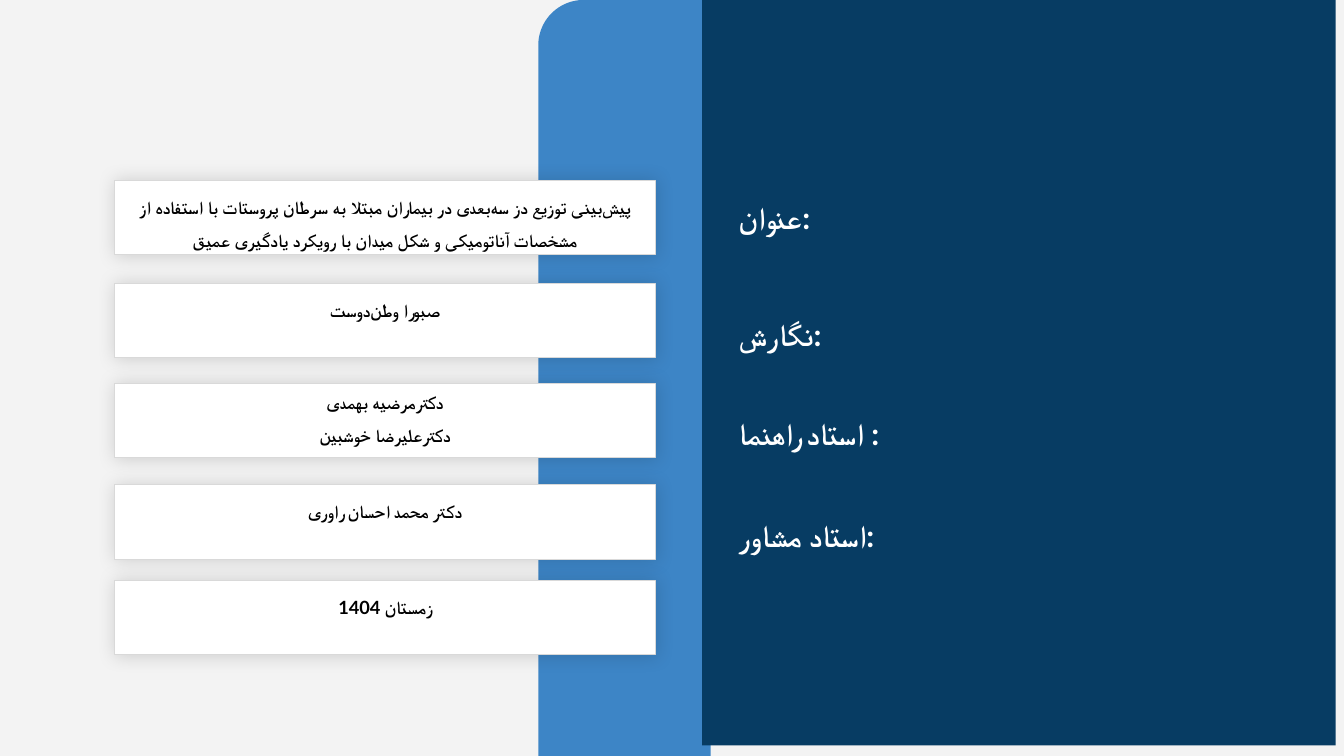
from dataclasses import dataclass
from math import cos, pi, sin

from pptx import Presentation
from pptx.dml.color import RGBColor
from pptx.enum.shapes import MSO_SHAPE
from pptx.enum.text import MSO_ANCHOR, MSO_AUTO_SIZE, PP_ALIGN
from pptx.oxml import parse_xml
from pptx.oxml.ns import nsdecls, qn
from pptx.util import Pt

COLORS = {
    "background": "F3F3F3",
    "strip": "3D85C6",
    "panel": "073C63",
    "card": "FFFFFF",
    "border": "D9D9D9",
    "text": "000000",
    "label": "FFFFFF",
}
FONT = "Lato"
ZWNJ = chr(0x200C)  # Persian half-space
CARD_LEFT, CARD_WIDTH, CARD_HEIGHT = 82.1, 385.9, 53.1
LABEL_LEFT, LABEL_WIDTH, LABEL_HEIGHT = 520.6, 344.2, 33.8


@dataclass
class Line:
    text: str
    spacing: float = 1.5
    rtl: bool = True


@dataclass
class Card:
    top: float
    lines: list[Line]


@dataclass
class Label:
    top: float
    text: str


CARDS = [
    Card(128.9, [Line(f"پیش{ZWNJ}بینی توزیع دز سه{ZWNJ}بعدی در بیماران مبتلا به سرطان پروستات با استفاده از "
                      "مشخصات آناتومیکی و شکل میدان با رویکرد یادگیری عمیق")]),
    Card(202.3, [Line(f"صبورا وطن{ZWNJ}دوست")]),
    Card(273.6, [Line(f"دکتر{ZWNJ}مرضیه بهمدی", 1.15, False),
                 Line(f"دکتر{ZWNJ}علیرضا خوشبین")]),
    Card(346.3, [Line("دکتر محمد احسان راوری")]),
    Card(414.7, [Line("زمستان 1404")]),
]
LABELS = [
    Label(138.2, "عنوان:"),
    Label(221.8, "نگارش:"),
    Label(293, "استاد راهنما :"),
    Label(365.8, "استاد مشاور:"),
]


def rgb(name: str) -> RGBColor:
    return RGBColor.from_string(COLORS[name])


def paint(sp, name: str) -> None:
    sp.shadow.inherit = False
    sp.fill.solid()
    sp.fill.fore_color.rgb = rgb(name)
    sp.line.fill.background()


def format_run(r, size: float, color: str) -> None:
    r.font.size = Pt(size)
    r.font.bold = True
    r.font.color.rgb = rgb(color)
    r.font.name = FONT
    # Persian letters take the complex-script font
    r._r.get_or_add_rPr().append(parse_xml(f'<a:cs {nsdecls("a")} typeface="{FONT}"/>'))


def add_strip(s, left: float, right: float, bottom: float, radius: float) -> None:
    steps = 24
    angles = [pi / 2 * i / steps for i in range(steps + 1)]
    arc = [(Pt(left + radius * (1 - cos(a))), Pt(radius * (1 - sin(a)))) for a in angles]
    builder = s.shapes.build_freeform(Pt(left), Pt(bottom))
    builder.add_line_segments(arc + [(Pt(right), 0), (Pt(right), Pt(bottom))], close=True)
    paint(builder.convert_to_shape(), "strip")


def add_card(s, card: Card) -> None:
    sp = s.shapes.add_shape(MSO_SHAPE.RECTANGLE, Pt(CARD_LEFT), Pt(card.top),
                            Pt(CARD_WIDTH), Pt(CARD_HEIGHT))
    paint(sp, "card")
    sp.line.color.rgb = rgb("border")
    sp.line.width = Pt(0.75)
    # Soft glow-like shadow
    sp._element.spPr.find(qn("a:effectLst")).append(parse_xml(
        f'<a:outerShdw {nsdecls("a")} blurRad="{Pt(13)}" dist="0" dir="0" rotWithShape="0">'
        '<a:srgbClr val="000000"><a:alpha val="15000"/></a:srgbClr></a:outerShdw>'))
    tf = sp.text_frame
    tf.word_wrap = True
    tf.vertical_anchor = MSO_ANCHOR.TOP
    tf.text = "\n".join(line.text for line in card.lines)
    for p, line in zip(tf.paragraphs, card.lines):
        p.alignment = PP_ALIGN.CENTER
        p.line_spacing = line.spacing
        if line.rtl:
            p._p.get_or_add_pPr().set("rtl", "1")
        format_run(p.runs[0], 13, "text")


def add_label(s, label: Label) -> None:
    sp = s.shapes.add_textbox(Pt(LABEL_LEFT), Pt(label.top), Pt(LABEL_WIDTH), Pt(LABEL_HEIGHT))
    tf = sp.text_frame
    tf.word_wrap = True
    tf.auto_size = MSO_AUTO_SIZE.SHAPE_TO_FIT_TEXT
    tf.text = label.text
    format_run(tf.paragraphs[0].runs[0], 22, "label")


def main() -> None:
    prs = Presentation()
    prs.slide_width, prs.slide_height = Pt(960), Pt(540)
    s = prs.slides.add_slide(prs.slide_layouts[6])
    s.background.fill.solid()
    s.background.fill.fore_color.rgb = rgb("background")

    # Blue strip and dark panel
    add_strip(s, 384.5, 507.6, 540, 32.4)
    panel = s.shapes.add_shape(MSO_SHAPE.RECTANGLE, Pt(501.5), Pt(-7.5), Pt(452.5), Pt(540))
    paint(panel, "panel")

    # Cards with the answers, labels on the panel
    for card in CARDS:
        add_card(s, card)
    for label in LABELS:
        add_label(s, label)

    prs.save("out.pptx")


if __name__ == "__main__":
    main()
